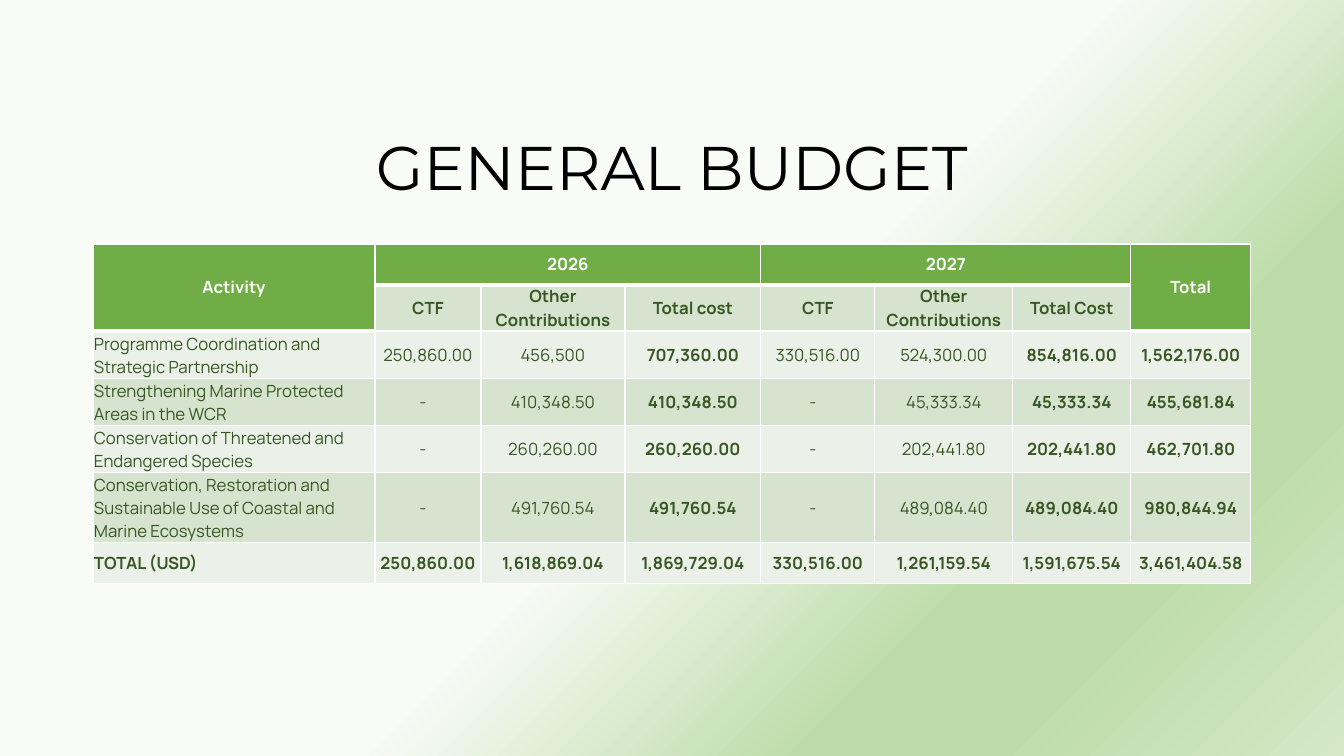
from lxml.etree import SubElement
from pptx import Presentation
from pptx.dml.color import RGBColor
from pptx.enum.text import MSO_ANCHOR, MSO_AUTO_SIZE, PP_ALIGN
from pptx.oxml.ns import qn
from pptx.util import Pt

PX = 914400 / 100.8
BLACK = RGBColor(0x00, 0x00, 0x00)
WHITE = RGBColor(0xFF, 0xFF, 0xFF)
GREEN = RGBColor(0x70, 0xAD, 0x47)
DARK_GREEN = RGBColor(0x38, 0x57, 0x23)
PALE_GREEN = RGBColor(0xEB, 0xF1, 0xE9)
SOFT_GREEN = RGBColor(0xD5, 0xE3, 0xCF)
BACKGROUND_STOPS = [
    (53, RGBColor(0xF8, 0xFB, 0xF6)),
    (74, RGBColor(0xBE, 0xDC, 0xAA)),
    (83, RGBColor(0xBE, 0xDC, 0xAA)),
    (100, RGBColor(0xD4, 0xE8, 0xC6)),
]

COLUMN_WIDTHS = [282, 106, 144, 136, 114, 138, 118, 120]
ROW_HEIGHT = 41
BOLD_COLUMNS = (3, 6, 7)
ROWS = [
    ["Activity", "2026", "", "", "2027", "", "", "Total"],
    ["", "CTF", "Other\nContributions", "Total cost",
     "CTF", "Other\nContributions", "Total Cost", ""],
    ["Programme Coordination and Strategic Partnership", "250,860.00", "456,500",
     "707,360.00", "330,516.00", "524,300.00", "854,816.00", "1,562,176.00"],
    ["Strengthening Marine Protected Areas in the WCR", "-", "410,348.50",
     "410,348.50", "-", "45,333.34", "45,333.34", "455,681.84"],
    ["Conservation of Threatened and Endangered Species", "-", "260,260.00",
     "260,260.00", "-", "202,441.80", "202,441.80", "462,701.80"],
    ["Conservation, Restoration and Sustainable Use of Coastal and Marine Ecosystems",
     "-", "491,760.54", "491,760.54", "-", "489,084.40", "489,084.40", "980,844.94"],
    ["TOTAL (USD)", "250,860.00", "1,618,869.04", "1,869,729.04",
     "330,516.00", "1,261,159.54", "1,591,675.54", "3,461,404.58"],
]
MERGES = [(0, 0, 1, 0), (0, 1, 0, 3), (0, 4, 0, 6), (0, 7, 1, 7)]


def px(length):
    return round(length * PX)


def add_border(cell, side, points):
    line = SubElement(cell._tc.get_or_add_tcPr(), qn(f"a:ln{side}"), w=str(Pt(points)))
    fill = SubElement(line, qn("a:solidFill"))
    SubElement(fill, qn("a:srgbClr"), val=str(WHITE))


presentation = Presentation()
presentation.slide_width = px(1344)
presentation.slide_height = px(756)
slide = presentation.slides.add_slide(presentation.slide_layouts[5])

# Diagonal background gradient
background = slide.background.fill
background.gradient()
background.gradient_angle = 315
stop_list = slide.element.find(".//" + qn("a:gsLst"))
for old_stop in list(stop_list):
    stop_list.remove(old_stop)
for percent, color in BACKGROUND_STOPS:
    stop = SubElement(stop_list, qn("a:gs"), pos=str(percent * 1000))
    SubElement(stop, qn("a:srgbClr"), val=str(color))

# Title
title = slide.shapes.title
title.left, title.top, title.width, title.height = px(93), px(98), px(1158), px(146)
title.text_frame.text = "GENERAL BUDGET"
title.text_frame.auto_size = MSO_AUTO_SIZE.NONE
title.text_frame.vertical_anchor = MSO_ANCHOR.MIDDLE
heading = title.text_frame.paragraphs[0]
heading.alignment = PP_ALIGN.CENTER
heading.line_spacing = 0.9
heading.font.name = "Montserrat"
heading.font.size = Pt(44)
heading.font.color.rgb = BLACK

# Budget table
table = slide.shapes.add_table(
    len(ROWS), len(COLUMN_WIDTHS), px(93), px(244),
    px(sum(COLUMN_WIDTHS)), px(ROW_HEIGHT * len(ROWS))).table
for column, width in zip(table.columns, COLUMN_WIDTHS):
    column.width = px(width)
for row in table.rows:
    row.height = px(ROW_HEIGHT)
for top, left, bottom, right in MERGES:
    table.cell(top, left).merge(table.cell(bottom, right))

# Cell borders, fills and text
for r, texts in enumerate(ROWS):
    for c, text in enumerate(texts):
        cell = table.cell(r, c)
        is_heading = r == 0 or (r == 1 and not text)
        for side in "LRTB":
            add_border(cell, side, 3 if is_heading and side == "B" else 1)
        cell.fill.solid()
        cell.fill.fore_color.rgb = (
            GREEN if is_heading else SOFT_GREEN if r % 2 else PALE_GREEN)

        cell.vertical_anchor = MSO_ANCHOR.MIDDLE
        cell.margin_left = cell.margin_right = px(7 if r < 2 else 1)
        cell.margin_top = px(0 if r < 2 else 1)
        cell.margin_bottom = 0
        if text == "-":
            cell.margin_right = px(11)
        if not text:
            continue
        cell.text_frame.text = text
        for paragraph in cell.text_frame.paragraphs:
            paragraph.alignment = PP_ALIGN.LEFT if r > 1 and c == 0 else PP_ALIGN.CENTER
            for run in paragraph.runs:
                run.font.name = "Manrope"
                run.font.size = Pt(12)
                run.font.bold = r < 2 or r == len(ROWS) - 1 or c in BOLD_COLUMNS
                run.font.color.rgb = WHITE if is_heading else DARK_GREEN

presentation.save("out.pptx")
